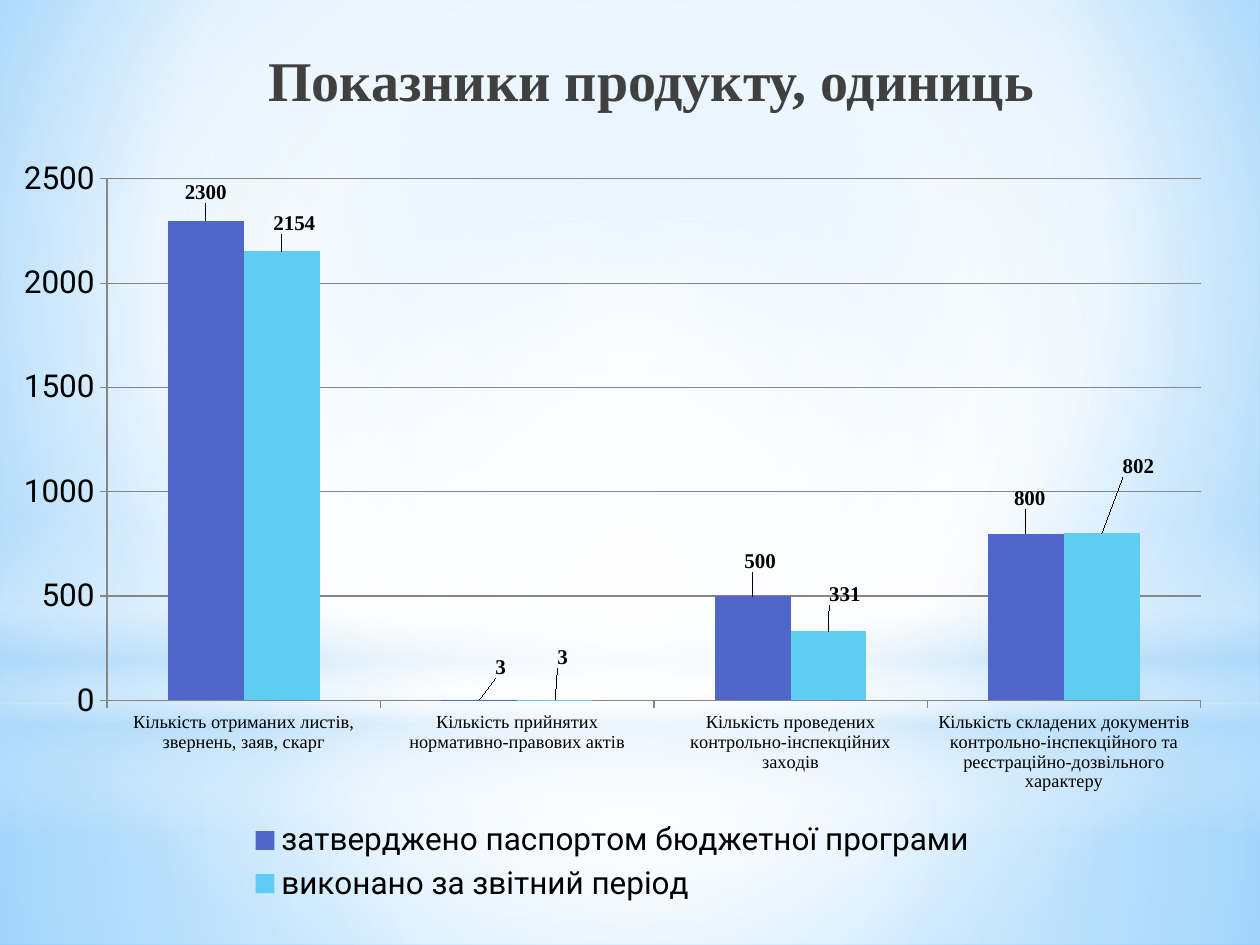
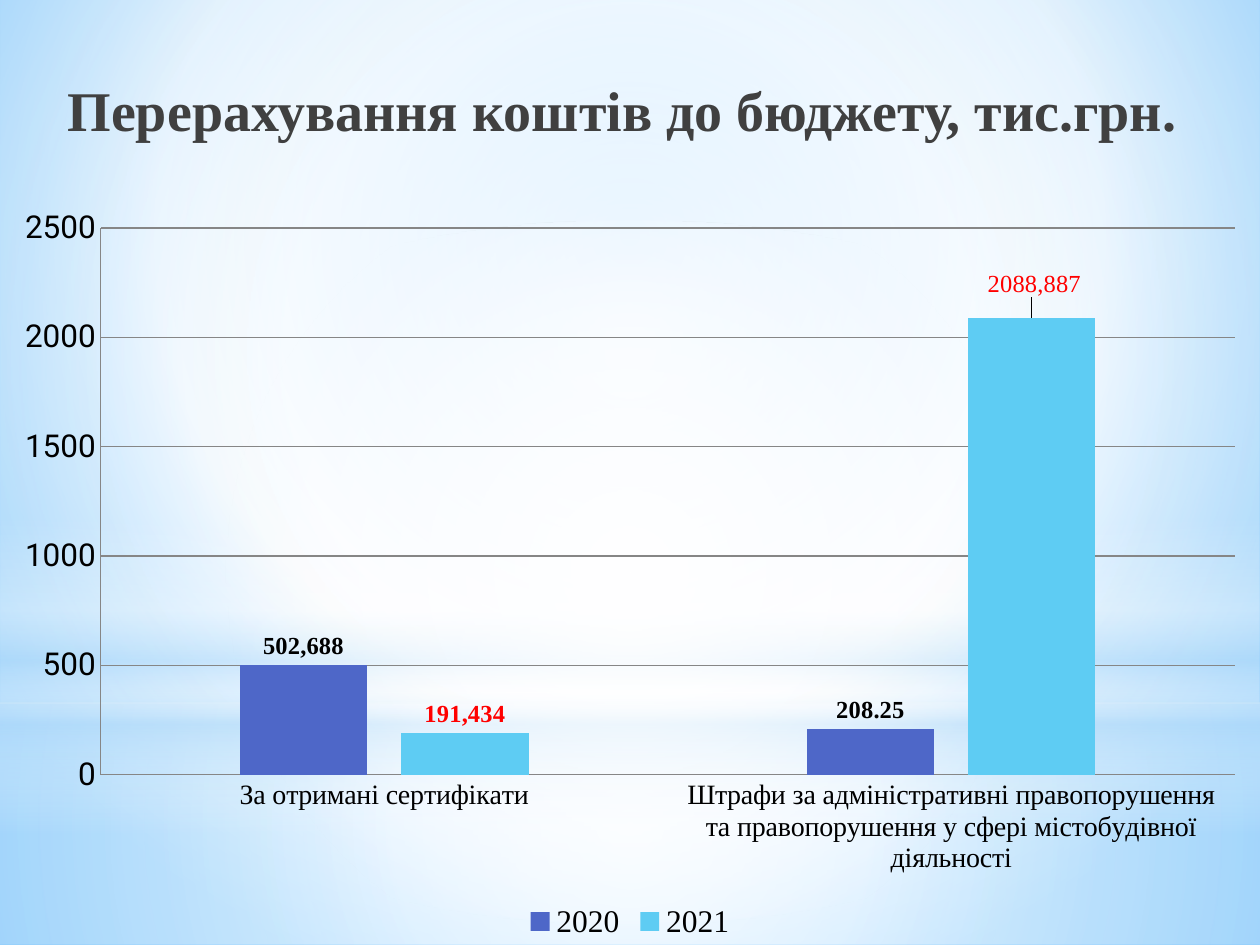
from pptx import Presentation
from pptx.chart.data import CategoryChartData
from pptx.dml.color import RGBColor
from pptx.enum.chart import (XL_CHART_TYPE as ChartType, XL_LABEL_POSITION as LabelPosition,
                             XL_LEGEND_POSITION as LegendPosition, XL_TICK_MARK as TickMark)
from pptx.enum.shapes import MSO_SHAPE as Preset
from pptx.enum.text import MSO_ANCHOR as Anchor, MSO_AUTO_SIZE as AutoSize, PP_ALIGN as Align
from pptx.oxml import parse_xml
from pptx.oxml.ns import nsdecls, qn
from pptx.util import Inches, Pt

# Shared look
SERIF, SANS = "Times New Roman", "Roboto"
BLACK, RED, GRID = "000000", "FF0000", "868686"
SERIES_COLORS = ["4E67C8", "5ECCF3"]
WHITE, SKY = "FFFFFF", "B4DCFA"
CENTER = (50, 50, 50, 50)

# Gradient stops: position, colour, opacity (all in percent)
BACKGROUND_STOPS = [(0, "9ED5FF", 100), (60, WHITE, 100), (100, "5BB9FF", 100)]
TITLE_STOPS = [(0, BLACK, 100), (40, "404040", 100), (100, "212745", 65)]
BANDS = [
    (Preset.RECTANGLE, 5.58, 1.92,
     [(0, WHITE, 91), (37, WHITE, 76), (100, SKY, 79)], CENTER),
    (Preset.RECTANGLE, 0, 5.58,
     [(0, WHITE, 89), (48, WHITE, 62), (100, SKY, 79)], CENTER),
    (Preset.RECTANGLE, 4.12, 2.5,
     [(0, WHITE, 0), (29, WHITE, 30), (45, SKY, 40),
      (55, WHITE, 26), (65, SKY, 60), (100, WHITE, 0)], None),
    (Preset.OVAL, 1.75, 5.58, [(0, WHITE, 100), (56, WHITE, 0)], CENTER),
]


def rgb(color):
    return RGBColor.from_string(color)


def set_gradient(fill, element, stops, focus=None):
    """Fill with a circular gradient around focus, or a vertical one without it."""
    fill.gradient()
    stop_xml = "".join(
        f'<a:gs pos="{position * 1000}"><a:srgbClr val="{color}">'
        f'<a:alpha val="{opacity * 1000}"/></a:srgbClr></a:gs>'
        for position, color, opacity in stops)
    if focus:
        sides = " ".join(f'{side}="{value * 1000}"' for side, value in zip("ltrb", focus))
        direction = f'<a:path path="circle"><a:fillToRect {sides}/></a:path>'
    else:
        direction = '<a:lin ang="5400000" scaled="0"/>'
    gradient = element.find(".//" + qn("a:gradFill"))
    gradient.getparent().replace(gradient, parse_xml(
        f'<a:gradFill {nsdecls("a")} rotWithShape="1"><a:gsLst>{stop_xml}</a:gsLst>'
        f'{direction}</a:gradFill>'))


def style_font(font, size, name=SERIF, bold=False, color=BLACK):
    font.size, font.name, font.bold = Pt(size), name, bold
    font.color.rgb = rgb(color)


def write_text(text_frame, text, align=Align.CENTER, **font_format):
    paragraph = text_frame.paragraphs[0]
    paragraph.alignment = align
    run = paragraph.add_run()
    run.text = text
    style_font(run.font, **font_format)
    return run


def manual_layout(**values):
    items = "".join(f'<c:{name} val="{value}"/>' for name, value in values.items())
    return parse_xml(f'<c:layout {nsdecls("c")}><c:manualLayout>{items}'
                     '</c:manualLayout></c:layout>')


# Master: background and soft light bands
def decorate_master(master, slide, width):
    set_gradient(master.background.fill, master.element, BACKGROUND_STOPS, (20, 10, 20, 60))
    for index, (preset, top, height, stops, focus) in enumerate(BANDS):
        band = slide.shapes.add_shape(preset, 0, Inches(top), width, Inches(height))
        band.shadow.inherit = False
        band.line.fill.background()
        set_gradient(band.fill, band.element, stops, focus)
        band.element.xpath(".//p:cNvPr")[0].set("id", str(100 + index))
        master.shapes.element.insert(2 + index, band.element)


def place_title(slide, text, box, top_margin):
    title = slide.shapes.title
    title.left, title.top, title.width, title.height = map(Inches, box)
    text_frame = title.text_frame
    text_frame.word_wrap = True
    text_frame.auto_size = AutoSize.NONE
    text_frame.vertical_anchor = Anchor.TOP
    text_frame.margin_top = Inches(top_margin)
    run = write_text(text_frame, text, size=32, bold=True)
    set_gradient(run.font.fill, title.element, TITLE_STOPS)


def place_plot(chart, box, plot_box):
    """Fix the inner plot area; plot_box is in inches from the chart's corner."""
    width, height = box[2:]
    left, top, plot_width, plot_height = plot_box
    plot_area = chart.element.xpath(".//c:plotArea")[0]
    for layout in plot_area.findall(qn("c:layout")):
        plot_area.remove(layout)
    plot_area.insert(0, manual_layout(
        layoutTarget="inner", xMode="edge", yMode="edge", x=left / width, y=top / height,
        w=plot_width / width, h=plot_height / height))


def label_point(chart, box, series_index, point_index, label_format,
                text=None, shift=None, **changes):
    """Give one data label its own text and a shift in inches."""
    series = chart.plots[0].series[series_index]
    label = series.points[point_index].data_label
    label_format = {**label_format, **changes}
    if text:
        write_text(label.text_frame, text, **label_format)
    else:
        style_font(label.font, **label_format)
    label.position = LabelPosition.OUTSIDE_END
    if shift:
        index = chart.element.xpath(
            f".//c:ser[{series_index + 1}]//c:dLbl/c:idx[@val='{point_index}']")[0]
        index.addnext(manual_layout(x=shift[0] / box[2], y=shift[1] / box[3]))


def style_axes(chart, category_size, tick_mark):
    for axis in (chart.category_axis, chart.value_axis):
        axis.major_tick_mark, axis.minor_tick_mark = tick_mark, TickMark.NONE
        axis.format.line.color.rgb = rgb(GRID)
        axis.format.line.width = Pt(0.75)
    style_font(chart.category_axis.tick_labels.font, category_size)
    value_axis = chart.value_axis
    value_axis.minimum_scale, value_axis.maximum_scale, value_axis.major_unit = 0, 2500, 500
    value_axis.has_major_gridlines = True
    value_axis.major_gridlines.format.line.color.rgb = rgb(GRID)
    value_axis.major_gridlines.format.line.width = Pt(0.75)


def add_column_chart(slide, box, plot_box, categories, series_values, point_labels,
                     label_size, label_colors, category_size, tick_mark,
                     legend_font, gap, overlap=0):
    data = CategoryChartData()
    data.categories = categories
    for name, values in series_values.items():
        data.add_series(name, values)
    chart = slide.shapes.add_chart(
        ChartType.COLUMN_CLUSTERED, *map(Inches, box), data).chart
    chart.has_title = False
    style_font(chart.font, 18, SANS)
    style_axes(chart, category_size, tick_mark)
    place_plot(chart, box, plot_box)

    chart.has_legend = True
    chart.legend.position = LegendPosition.BOTTOM
    chart.legend.include_in_layout = False
    style_font(chart.legend.font, 18, legend_font)

    plot = chart.plots[0]
    plot.gap_width, plot.overlap, plot.vary_by_categories = gap, overlap, False
    for index, series in enumerate(plot.series):
        series.format.fill.solid()
        series.format.fill.fore_color.rgb = rgb(SERIES_COLORS[index])
        label_format = dict(size=label_size, bold=True, color=label_colors[index])
        labels = series.data_labels
        labels.show_value = True
        labels.position = LabelPosition.OUTSIDE_END
        style_font(labels.font, **label_format)
        for point_index, options in point_labels[index].items():
            label_point(chart, box, index, point_index, label_format, **options)


# Slide 1: product indicators
def fill_indicators_slide(slide):
    shifts = [[(0, -0.1), (0.17, -0.13), (0.06, -0.15), (0.03, -0.15)],
              [(0.1, -0.09), (0.06, -0.21), (0.13, -0.17), (0.29, -0.4)]]
    add_column_chart(
        slide, box=(0, 1.15, 9.72, 6.06), plot_box=(0.85, 0.27, 8.68, 4.14),
        categories=["Кількість отриманих листів, звернень, заяв, скарг",
                    "Кількість прийнятих нормативно-правових актів",
                    "Кількість проведених контрольно-інспекційних заходів",
                    "Кількість складених документів контрольно-інспекційного та "
                    "реєстраційно-дозвільного характеру"],
        series_values={"затверджено паспортом бюджетної програми": [2300, 3, 500, 800],
                       "виконано за звітний період": [2154, 3, 331, 802]},
        point_labels=[{index: dict(shift=shift) for index, shift in enumerate(row)}
                      for row in shifts],
        label_size=12, label_colors=[BLACK, BLACK], category_size=10.5,
        tick_mark=TickMark.OUTSIDE, legend_font=SANS, gap=160)
    place_title(slide, "Показники продукту, одиниць", (1.61, 0.29, 7.12, 1.25), 0.07)


# Slide 2: payments to the budget
def fill_budget_slide(slide):
    place_title(slide, "Перерахування коштів до бюджету, тис.грн.", (0, 0, 9.88, 1.47), 0.6)
    add_column_chart(
        slide, box=(0, 1.55, 10, 5.95), plot_box=(0.8, 0.26, 9, 4.34),
        categories=["За отримані сертифікати",
                    "Штрафи за адміністративні правопорушення та правопорушення "
                    "у сфері містобудівної діяльності"],
        series_values={"2020": [502.688, 208.25], "2021": [191.434, 2088.887]},
        point_labels=[{0: dict(text="502,688")},
                      {0: dict(text="191,434"),
                       1: dict(text="2088,887", shift=(0.02, -0.12), bold=False)}],
        label_size=14, label_colors=[BLACK, RED], category_size=16,
        tick_mark=TickMark.NONE, legend_font=SERIF, gap=219, overlap=-27)


def main():
    presentation = Presentation()
    presentation.slide_width, presentation.slide_height = Inches(10), Inches(7.5)
    title_only = presentation.slide_layouts[5]
    slides = [presentation.slides.add_slide(title_only) for _ in range(2)]
    decorate_master(presentation.slide_master, slides[0], presentation.slide_width)
    fill_indicators_slide(slides[0])
    fill_budget_slide(slides[1])
    presentation.save("out.pptx")


if __name__ == "__main__":
    main()
